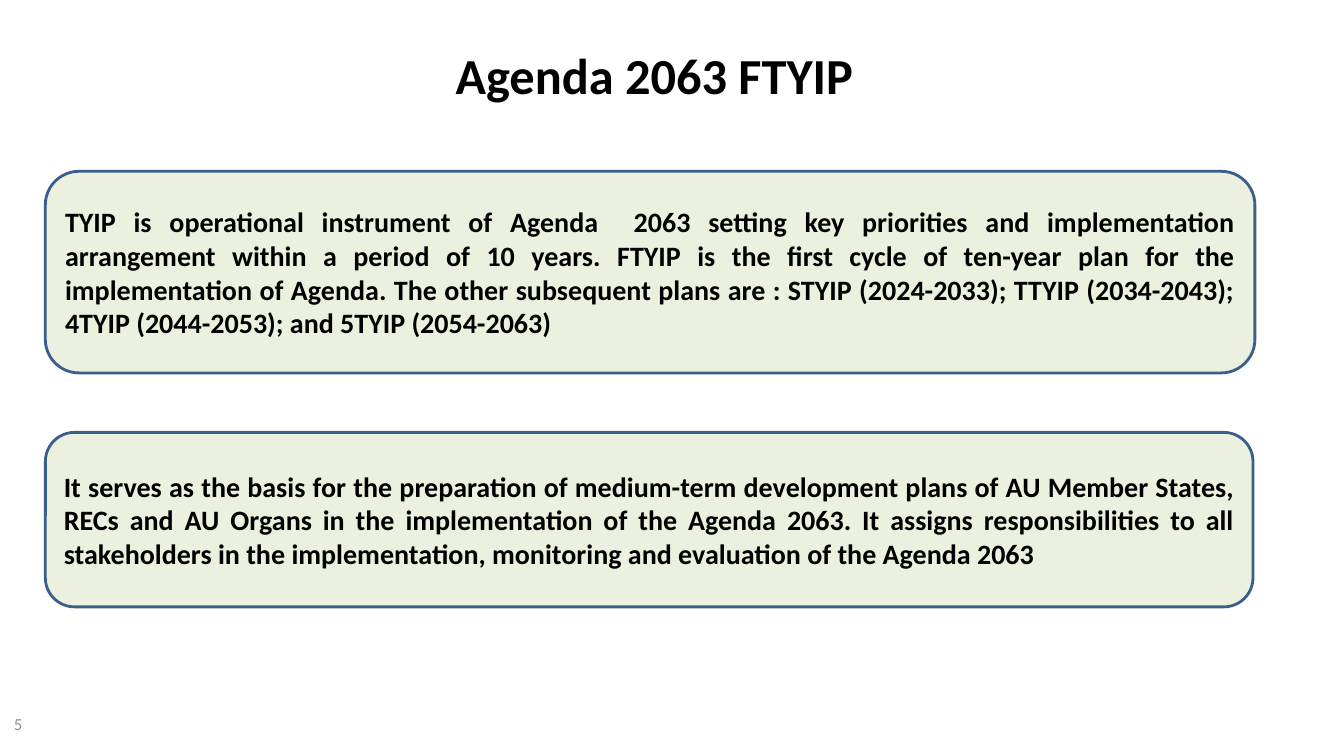
import dataclasses
import pptx
import pptx.util
import pptx.dml.color
import pptx.enum.shapes
import pptx.enum.text

Pt = pptx.util.Pt
RGB = pptx.dml.color.RGBColor.from_string
Align = pptx.enum.text.PP_ALIGN


@dataclasses.dataclass(frozen=True)
class Theme:
    face: str = "Calibri"
    ink: str = "000000"
    gray: str = "8C8C8C"
    fill: str = "EBF1DE"
    edge: str = "3A5F8C"
    head: int = 36
    body: int = 20
    small: int = 12


class Deck:
    """Draw styled elements on the current slide."""

    def __init__(self, theme, slide):
        self.theme = theme
        self.slide = slide

    def letter(self, shape, words, size, color, bold, align):
        frame = shape.text_frame
        frame.word_wrap = True
        frame.vertical_anchor = pptx.enum.text.MSO_ANCHOR.MIDDLE
        para = frame.paragraphs[0]
        para.alignment = align
        run = para.add_run()
        run.text = words
        style = {"name": self.theme.face, "size": Pt(size), "bold": bold}
        for key, value in style.items():
            setattr(run.font, key, value)
        run.font.color.rgb = RGB(color)

    def label(self, words, area, size, color, bold=False, align=Align.LEFT):
        box = self.slide.shapes.add_textbox(*map(Pt, area))
        self.letter(box, words, size, color, bold, align)

    def panel(self, words, area):
        kind = pptx.enum.shapes.MSO_SHAPE.ROUNDED_RECTANGLE
        box = self.slide.shapes.add_shape(kind, *map(Pt, area))
        box.shadow.inherit = False
        box.fill.solid()
        box.fill.fore_color.rgb = RGB(self.theme.fill)
        box.line.color.rgb = RGB(self.theme.edge)
        box.line.width = Pt(2)
        self.letter(box, words, self.theme.body, self.theme.ink, True, Align.JUSTIFY)


PANELS = [
    ("TYIP is operational instrument of Agenda  2063 setting key priorities and "
     "implementation arrangement within a period of 10 years. FTYIP is the first "
     "cycle of ten-year plan for the implementation of Agenda. The other subsequent "
     "plans are : STYIP (2024-2033); TTYIP (2034-2043); 4TYIP (2044-2053); and "
     "5TYIP (2054-2063)", (32.4, 122.4, 864, 144)),
    ("It serves as the basis for the preparation of medium-term development plans of "
     "AU Member States, RECs and AU Organs in the implementation of the Agenda 2063. "
     "It assigns responsibilities to all stakeholders in the implementation, "
     "monitoring and evaluation of the Agenda 2063", (32.4, 308.9, 862.6, 124.6)),
]


def main():
    show = pptx.Presentation()
    show.slide_width, show.slide_height = Pt(960), Pt(540)
    theme = Theme()
    deck = Deck(theme, show.slides.add_slide(show.slide_layouts[6]))
    deck.label("Agenda 2063 FTYIP", (35.5, 21.6, 864, 62.6), theme.head, theme.ink,
               True, Align.CENTER)
    deck.label("5", (2.9, 502.6, 224, 28.8), theme.small, theme.gray)
    for words, area in PANELS:
        deck.panel(words, area)
    show.save("out.pptx")


if __name__ == "__main__":
    main()
